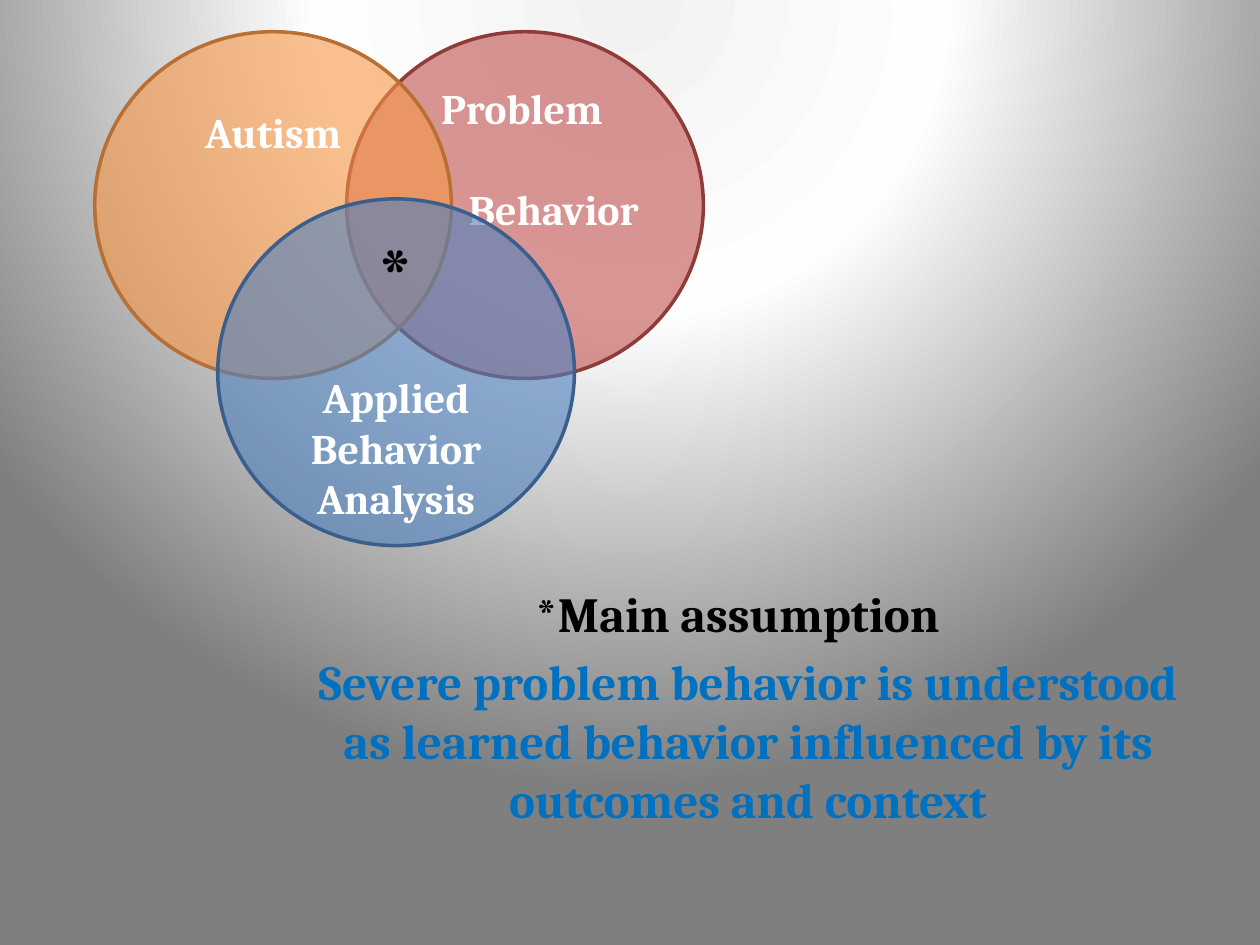
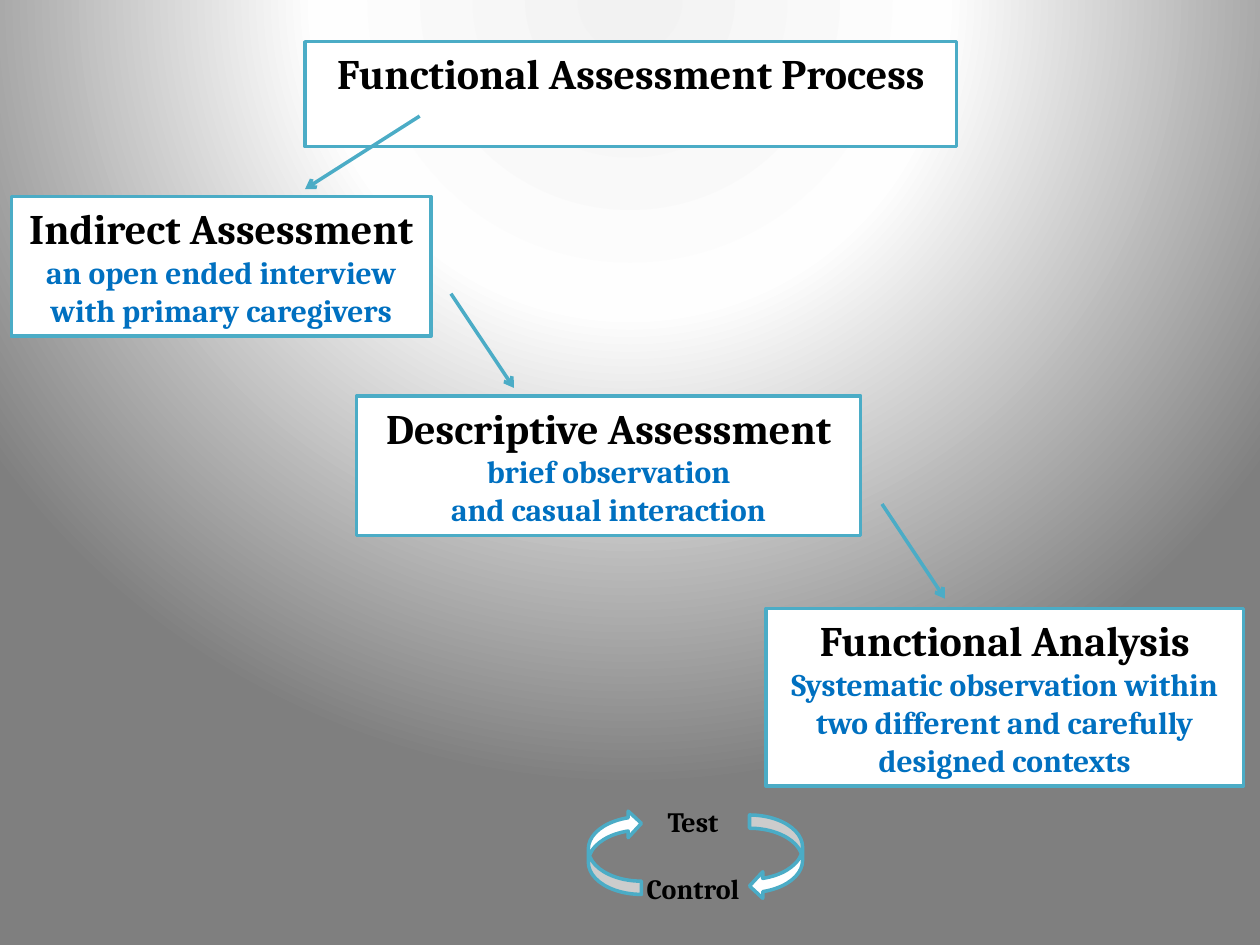
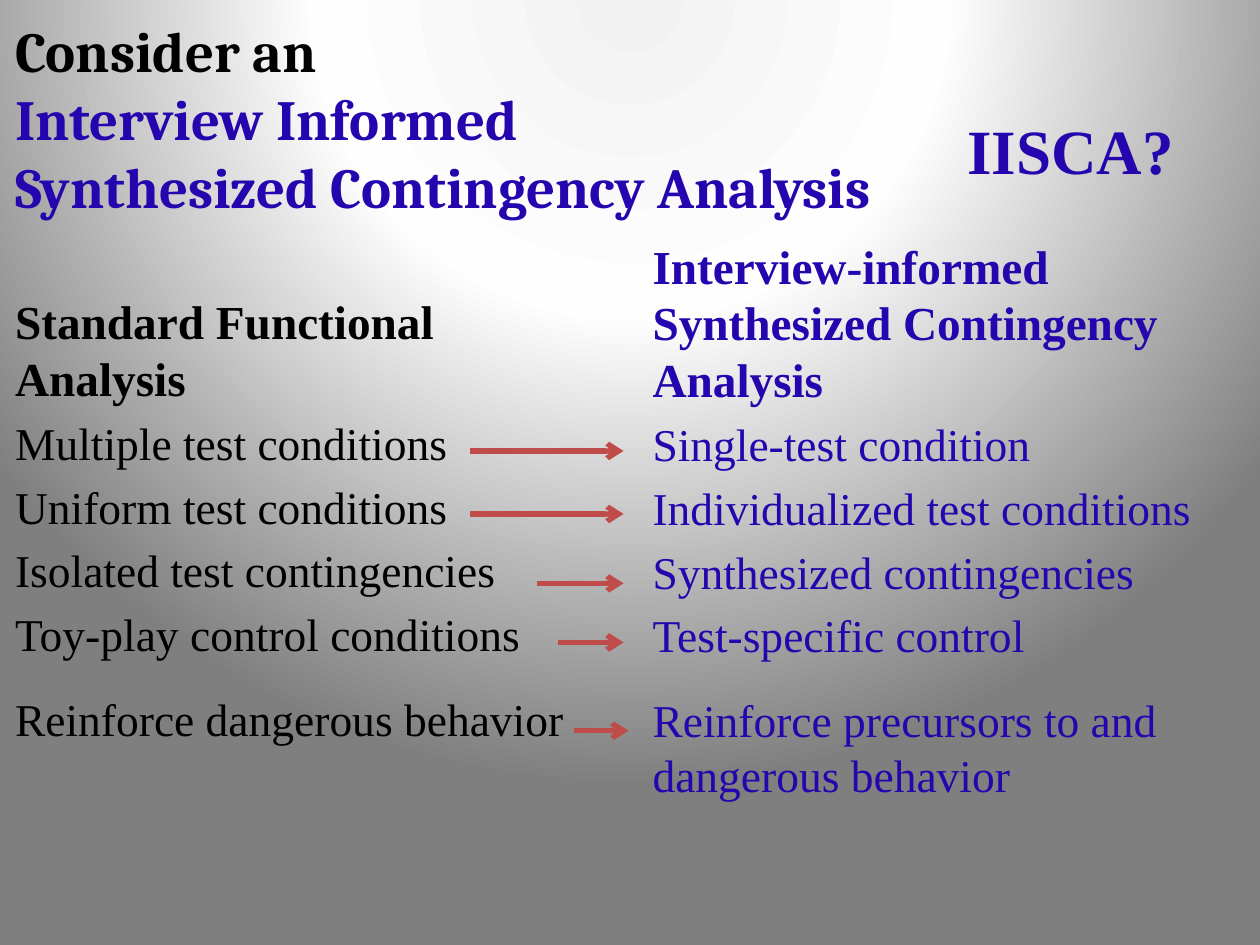
from dataclasses import dataclass

from lxml import etree
from pptx import Presentation
from pptx.dml.color import RGBColor
from pptx.enum.dml import MSO_FILL
from pptx.enum.shapes import MSO_CONNECTOR, MSO_SHAPE
from pptx.enum.text import MSO_ANCHOR, MSO_AUTO_SIZE, PP_ALIGN
from pptx.oxml import parse_xml
from pptx.oxml.ns import nsdecls, qn
from pptx.util import Cm, Pt

LEFT, CENTER, RIGHT = PP_ALIGN.LEFT, PP_ALIGN.CENTER, PP_ALIGN.RIGHT
TOP, MIDDLE = MSO_ANCHOR.TOP, MSO_ANCHOR.MIDDLE
FIXED, GROW = MSO_AUTO_SIZE.NONE, MSO_AUTO_SIZE.SHAPE_TO_FIT_TEXT
OVAL, RECTANGLE = MSO_SHAPE.OVAL, MSO_SHAPE.RECTANGLE
CURVED_ARROW = MSO_SHAPE.CURVED_LEFT_ARROW
STRAIGHT = MSO_CONNECTOR.STRAIGHT
SOLID = MSO_FILL.SOLID
TITLE_AND_CONTENT, TWO_CONTENT, TITLE_ONLY = 1, 3, 5


@dataclass(frozen=True)
class Theme:
    # Colours
    black: str = "000000"
    white: str = "FFFFFF"
    blue: str = "0070C0"
    indigo: str = "2505AD"
    teal: str = "4BACC6"
    red: str = "BF4C48"
    backdrop: tuple = ((0, "F2F2F2"), (40, "FEFEFE"), (100, "7F7F7F"))
    # Fonts
    heading_font: str = "Cambria"
    table_font: str = "Times New Roman"
    # Type sizes
    star: float = 48
    acronym: float = 36
    title: float = 32.4
    statement: float = 28
    column_head: float = 27
    column_item: float = 26
    label: float = 24
    detail: float = 18
    small: float = 16


THEME = Theme()


@dataclass
class Line:
    """One paragraph and its format; before is in points, indent in cm."""
    text: str
    size: float
    color: str = THEME.black
    bold: bool = True
    font: str = THEME.heading_font
    align: int = CENTER
    before: float = None
    indent: float = 0


# ---- Shared elements ----

def paint_backdrop(master):
    """Give every slide the radial grey gradient."""
    master.background.fill.solid()
    stops = "".join(
        f'<a:gs pos="{position * 1000}"><a:srgbClr val="{color}"/></a:gs>'
        for position, color in THEME.backdrop)
    gradient = parse_xml(
        f'<a:gradFill {nsdecls("a")} rotWithShape="1"><a:gsLst>{stops}</a:gsLst>'
        '<a:path path="circle"><a:fillToRect l="50000" t="-80000" '
        'r="50000" b="180000"/></a:path></a:gradFill>')
    solid = master.element.xpath("p:cSld/p:bg/p:bgPr/a:solidFill")[0]
    solid.getparent().replace(solid, gradient)


def write(frame, lines, anchor=TOP, auto_size=FIXED, wrap=True):
    frame.word_wrap = wrap
    frame.auto_size = auto_size
    frame.vertical_anchor = anchor
    frame.text = "\n".join(line.text for line in lines)
    for paragraph, line in zip(frame.paragraphs, lines):
        paragraph.alignment = line.align
        if line.before is not None:
            paragraph.space_before = Pt(line.before)
        properties = paragraph._p.get_or_add_pPr()
        properties.set("marL", str(Cm(line.indent)))
        properties.set("indent", "0")
        etree.SubElement(properties, qn("a:buNone"))
        for run in paragraph.runs:
            run.font.name = line.font
            run.font.size = Pt(line.size)
            run.font.bold = line.bold
            run.font.color.rgb = RGBColor.from_string(line.color)


def place(shape, left, top, width, height):
    shape.left, shape.top = Cm(left), Cm(top)
    shape.width, shape.height = Cm(width), Cm(height)
    return shape


def paint(shape, fill, outline, opacity=100):
    shape.fill.solid()
    shape.fill.fore_color.rgb = RGBColor.from_string(fill)
    shape.line.color.rgb = RGBColor.from_string(outline)
    shape.line.width = Pt(2)
    if opacity < 100 and shape.fill.type == SOLID:
        color = shape.element.xpath("p:spPr/a:solidFill/a:srgbClr")[0]
        etree.SubElement(color, qn("a:alpha"), val=str(opacity * 1000))


def add_figure(slide, preset, box, fill, outline, opacity=100):
    figure = slide.shapes.add_shape(preset, *(Cm(length) for length in box))
    figure.shadow.inherit = False
    paint(figure, fill, outline, opacity)
    return figure


def add_text(slide, box, lines, **options):
    text_box = slide.shapes.add_textbox(*(Cm(length) for length in box))
    write(text_box.text_frame, lines, **options)


def add_arrow(slide, start, end, color, width):
    arrow = slide.shapes.add_connector(
        STRAIGHT, *(Cm(length) for length in start + end))
    arrow.line.color.rgb = RGBColor.from_string(color)
    arrow.line.width = Pt(width)
    etree.SubElement(arrow.line._get_or_add_ln(), qn("a:tailEnd"), type="arrow")
    etree.SubElement(arrow.element.spPr, qn("a:effectLst"))


# ---- Slide 1: three overlapping fields ----

def add_circle(slide, left, top, fill, outline, opacity, lines,
               anchor=TOP, inset=0):
    circle = add_figure(slide, OVAL, (left, top, 7.19, 6.99),
                        fill, outline, opacity)
    circle.text_frame.margin_top = Cm(inset)
    write(circle.text_frame, lines, anchor=anchor)


def build_assumption(prs):
    slide = prs.slides.add_slide(prs.slide_layouts[TITLE_AND_CONTENT])
    heading = slide.shapes.title.element
    heading.getparent().remove(heading)

    statement = place(slide.placeholders[1], 5.08, 11.63, 19.05, 6.35)
    write(statement.text_frame, [
        Line("*Main assumption", THEME.statement, indent=0.53),
        Line("Severe problem behavior is understood as learned behavior "
             "influenced by its outcomes and context",
             THEME.statement, THEME.blue, indent=0.95),
    ])

    add_circle(slide, 6.99, 0.64, "C0504D", "8E3B39", 60, [
        Line("Problem", THEME.label, THEME.white, align=LEFT, indent=0.6),
        Line("Behavior", THEME.label, THEME.white, align=RIGHT, before=29),
    ])
    add_circle(slide, 1.91, 0.64, "F79646", "B76F34", 60,
               [Line("Autism", THEME.label, THEME.white)], inset=0.49)
    add_circle(slide, 4.39, 4.01, "4F81BD", "3A5F8C", 61, [
        Line("*", THEME.star),
        Line("Applied Behavior Analysis", THEME.label, THEME.white, before=28),
    ], anchor=MIDDLE, inset=0.13)


# ---- Slide 2: assessment steps ----

def add_step(slide, box, name, details):
    step = add_figure(slide, RECTANGLE, box, THEME.white, THEME.teal)
    lines = [Line(name, THEME.label)]
    lines += [Line(detail, THEME.detail, THEME.blue) for detail in details]
    write(step.text_frame, lines, auto_size=GROW)


def build_process(prs):
    slide = prs.slides.add_slide(prs.slide_layouts[TITLE_ONLY])
    heading = place(slide.shapes.title, 6.15, 0.84, 13.13, 1.27)
    paint(heading, THEME.white, THEME.teal)
    write(heading.text_frame,
          [Line("Functional Assessment Process", THEME.label)], auto_size=GROW)

    # Steps
    add_step(slide, (0.23, 3.96, 8.46, 2.82), "Indirect Assessment",
             ["an open ended interview with primary caregivers"])
    add_step(slide, (7.19, 7.98, 10.16, 2.82), "Descriptive Assessment",
             ["brief observation", "and casual interaction"])
    add_step(slide, (15.44, 12.27, 9.63, 3.58), "Functional Analysis",
             ["Systematic observation within two different and carefully "
              "designed contexts"])
    for start, end in (((8.46, 2.34), (6.15, 3.81)),
                       ((9.09, 5.92), (10.36, 7.82)),
                       ((17.78, 10.16), (19.05, 12.07))):
        add_arrow(slide, start, end, THEME.teal, 2)

    # Test and control cycle
    for left, top, rotation in ((15.11, 16.43, 0), (11.86, 16.33, 180)):
        turn = add_figure(slide, CURVED_ARROW, (left, top, 1.07, 1.7),
                          THEME.white, THEME.teal)
        turn.rotation = rotation
    add_text(slide, (12.7, 16.1, 2.54, 2.31), [
        Line("Test", THEME.small),
        Line("Control", THEME.small, before=19),
    ], auto_size=GROW)


# ---- Slide 3: two kinds of analysis ----

def fill_column(column, heads, items, color):
    style = {"color": color, "font": THEME.table_font, "align": LEFT}
    lines = [Line(head, THEME.column_head, before=0, **style) for head in heads]
    lines += [Line(item, THEME.column_item, bold=False, **style)
              for item in items]
    lines[-1].before = 17.5
    write(column.text_frame, lines)


def build_comparison(prs):
    slide = prs.slides.add_slide(prs.slide_layouts[TWO_CONTENT])
    heading = place(slide.shapes.title, 0.05, 0.43, 24.08, 3.89)
    write(heading.text_frame, [
        Line("Consider an", THEME.title, align=LEFT),
        Line("Interview Informed", THEME.title, THEME.indigo, align=LEFT),
        Line("Synthesized Contingency Analysis", THEME.title, THEME.indigo,
             align=LEFT),
    ], anchor=MIDDLE)
    add_text(slide, (19.25, 2.13, 4.72, 1.8), [
        Line("IISCA?", THEME.acronym, THEME.indigo, font=THEME.table_font,
             align=LEFT),
    ], auto_size=GROW, wrap=False)

    # Columns
    standard = place(slide.placeholders[1], 0.05, 5.77, 13.49, 11)
    fill_column(standard, ["Standard Functional", "Analysis"], [
        "Multiple test conditions",
        "Uniform test conditions",
        "Isolated test contingencies",
        "Toy-play control conditions",
        "Reinforce dangerous behavior",
    ], THEME.black)
    informed = place(slide.placeholders[2], 12.9, 4.65, 13.49, 12.07)
    fill_column(informed,
                ["Interview-informed Synthesized Contingency Analysis"], [
                    "Single-test condition",
                    "Individualized test conditions",
                    "Synthesized contingencies",
                    "Test-specific control",
                    "Reinforce precursors to and dangerous behavior",
                ], THEME.indigo)

    # Arrows between matching rows
    for start, end, y in ((9.47, 12.57, 9.09), (9.47, 12.57, 10.36),
                          (10.82, 12.57, 11.76), (11.25, 12.57, 12.95),
                          (11.58, 12.67, 14.73)):
        add_arrow(slide, (start, y), (end, y), THEME.red, 3)


def main():
    prs = Presentation()
    prs.slide_width, prs.slide_height = Cm(25.4), Cm(19.05)
    paint_backdrop(prs.slide_master)
    build_assumption(prs)
    build_process(prs)
    build_comparison(prs)
    prs.save("out.pptx")


if __name__ == "__main__":
    main()
